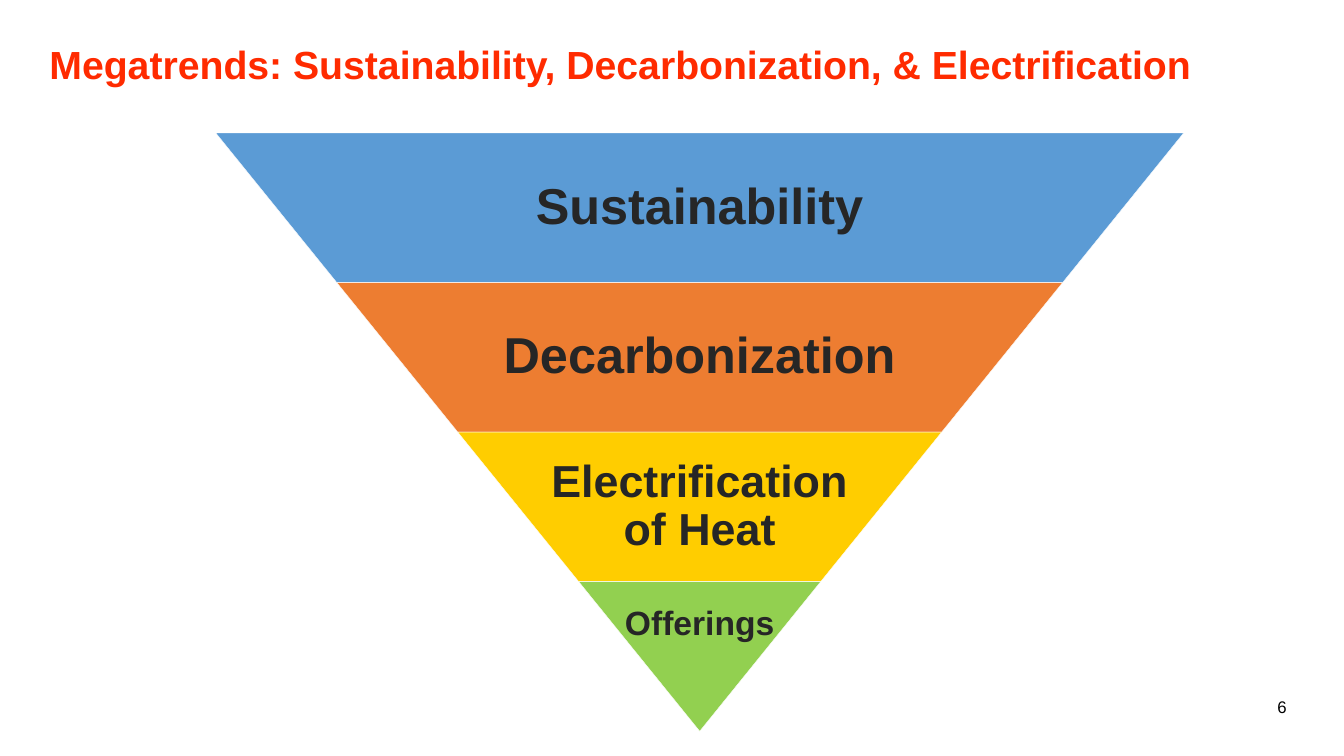
from pptx import Presentation
from pptx.dml.color import RGBColor
from pptx.enum.shapes import MSO_SHAPE
from pptx.enum.text import MSO_ANCHOR, MSO_AUTO_SIZE, PP_ALIGN
from pptx.util import Inches, Pt

# Lengths are percentages of the slide's width and height.
CENTER = 52.06
TOP = 17.6
TIER_HEIGHT = 19.78
SLANT = 9
TIERS = [
    # label, size, fill, share of the tier's width that the label may use
    ("Sustainability", 36, "5B9BD5", 0.65),
    ("Decarbonization", 36, "ED7D31", 0.65),
    ("Electrification of Heat", 32, "FFCD00", 0.65),
    ("Offerings", 24, "92D050", 1),
]


def color(value):
    return RGBColor.from_string(value)


def write(shape, text, size, hue, bold=False, align=PP_ALIGN.LEFT,
          anchor=MSO_ANCHOR.MIDDLE, spacing=0.9, inset=0.05, inset_top=0.05):
    frame = shape.text_frame
    frame.text = text
    frame.word_wrap = True
    frame.auto_size = MSO_AUTO_SIZE.NONE
    frame.vertical_anchor = anchor
    frame.margin_left = frame.margin_right = Inches(inset)
    frame.margin_top, frame.margin_bottom = Inches(inset_top), Inches(0.05)
    paragraph = frame.paragraphs[0]
    paragraph.alignment = align
    paragraph.line_spacing = spacing
    paragraph.space_before = Pt(0)
    font = paragraph.runs[0].font
    font.name, font.size, font.bold = "Arial", Pt(size), bold
    font.color.rgb = color(hue)


class Page:
    def __init__(self, deck):
        self.width, self.height = deck.slide_width, deck.slide_height
        self.slide = deck.slides.add_slide(deck.slide_layouts[5])

    def area(self, left, top, width, height):
        """Turn percentages of the slide into lengths."""
        return (int(self.width * left / 100), int(self.height * top / 100),
                int(self.width * width / 100), int(self.height * height / 100))

    def title(self, text, *place):
        title = self.slide.shapes.title
        title.left, title.top, title.width, title.height = self.area(*place)
        write(title, text, 28, "FF2B00", bold=True, anchor=MSO_ANCHOR.TOP, inset=0.1)

    def text(self, text, *place, **style):
        box = self.slide.shapes.add_textbox(*self.area(*place))
        write(box, text, **style)

    def trapezoid(self, fill, *place):
        """Draw a trapezoid with its wide side up."""
        shape = self.slide.shapes.add_shape(MSO_SHAPE.TRAPEZOID, *self.area(*place))
        shape.rotation = 180
        shape.adjustments[0] = self.width * SLANT / (self.height * TIER_HEIGHT)
        shape.shadow.inherit = False
        shape.fill.solid()
        shape.fill.fore_color.rgb = color(fill)
        shape.line.color.rgb = color("FFFFFF")
        shape.line.width = Pt(0.25)

    def funnel(self, tiers):
        for index, (label, size, fill, share) in enumerate(tiers):
            width = 2 * SLANT * (len(tiers) - index)
            top = TOP + index * TIER_HEIGHT
            self.trapezoid(fill, CENTER - width / 2, top, width, TIER_HEIGHT)
            is_tip = index == len(tiers) - 1
            self.text(label, CENTER - width * share / 2, top, width * share, TIER_HEIGHT,
                      size=size, hue="262626", bold=True, align=PP_ALIGN.CENTER,
                      anchor=MSO_ANCHOR.TOP if is_tip else MSO_ANCHOR.MIDDLE,
                      inset_top=0.25 if is_tip else 0.05)


def main():
    deck = Presentation()
    deck.slide_width, deck.slide_height = Inches(13.33), Inches(7.5)
    page = Page(deck)
    page.title("Megatrends: Sustainability, Decarbonization, & Electrification",
               2.93, 5.33, 92.42, 10.27)
    page.funnel(TIERS)
    page.text("6", 73.97, 90.8, 22.5, 5.33, size=12, hue="000000",
              align=PP_ALIGN.RIGHT, spacing=1, inset=0.1)
    deck.save("out.pptx")


if __name__ == "__main__":
    main()
